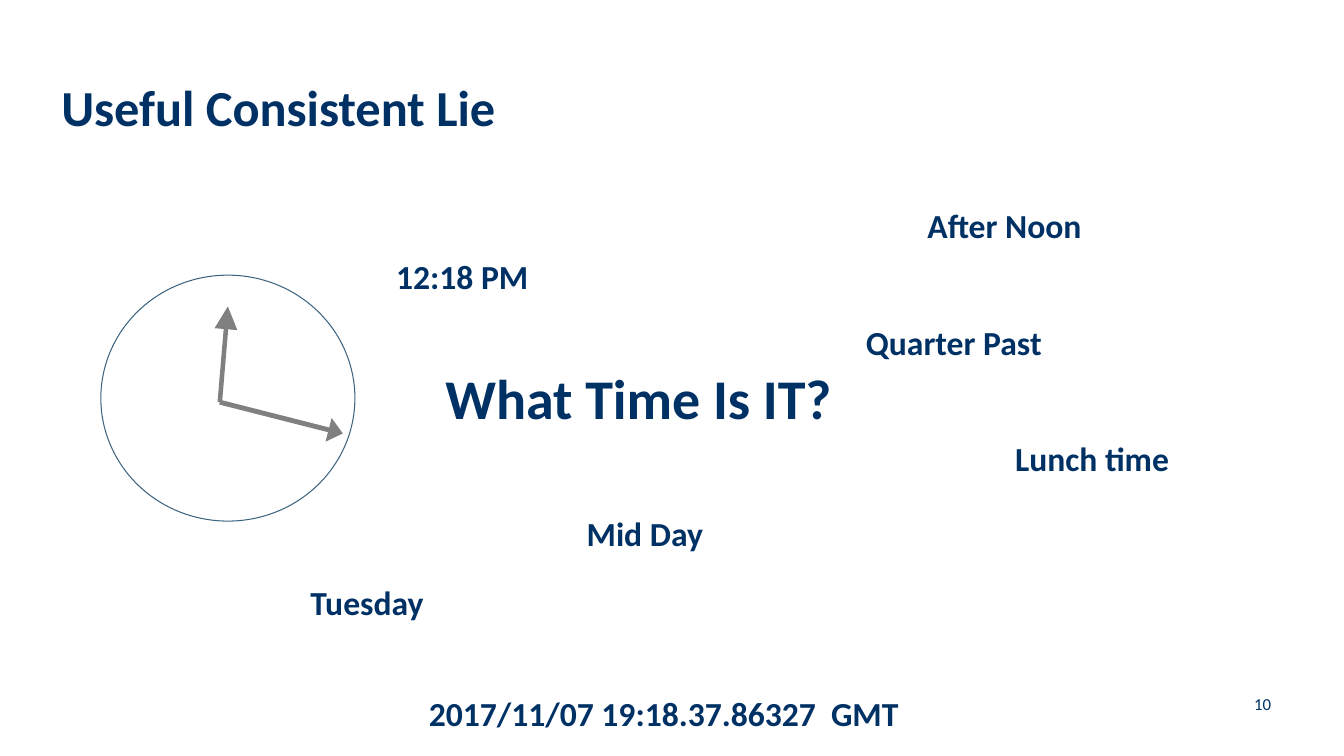
from lxml.etree import SubElement
from pptx import Presentation
from pptx.dml.color import RGBColor
from pptx.enum.shapes import MSO_CONNECTOR, MSO_SHAPE
from pptx.enum.text import MSO_ANCHOR, PP_ALIGN
from pptx.oxml.ns import qn
from pptx.util import Inches, Pt

NAVY = RGBColor(0x00, 0x31, 0x65)
RIM_BLUE = RGBColor(0x3C, 0x64, 0x81)
HAND_GREY = RGBColor(0x80, 0x80, 0x80)
WHITE = RGBColor(0xFF, 0xFF, 0xFF)

ANSWERS = [
    ("After Noon", 9.1, 1.98, 1.75, PP_ALIGN.LEFT),
    ("Lunch time", 9.97, 4.3, 1.74, PP_ALIGN.LEFT),
    ("Mid Day", 5.72, 5.04, 1.37, PP_ALIGN.LEFT),
    ("Quarter Past", 8.49, 3.14, 2.36, PP_ALIGN.LEFT),
    ("Tuesday", 2.98, 5.72, 1.34, PP_ALIGN.LEFT),
    ("12:18 PM", 3.83, 2.49, 1.52, PP_ALIGN.LEFT),
    ("2017/11/07 19:18.37.86327  GMT", 4.05, 6.83, 5.07, PP_ALIGN.CENTER),
]


def add_label(slide, words, box, size, bold=True, anchor=MSO_ANCHOR.TOP,
              align=PP_ALIGN.LEFT, wrap=True):
    label = slide.shapes.add_textbox(*map(Inches, box))
    frame = label.text_frame
    frame.word_wrap = wrap
    frame.vertical_anchor = anchor
    paragraph = frame.paragraphs[0]
    paragraph.alignment = align
    run = paragraph.add_run()
    run.text = words
    run.font.name = "Calibri"
    run.font.size = Pt(size)
    run.font.bold = bold
    run.font.color.rgb = NAVY


def add_hand(slide, pivot, tip, weight, head_length):
    hand = slide.shapes.add_connector(
        MSO_CONNECTOR.STRAIGHT, *map(Inches, (*pivot, *tip)))
    hand.line.color.rgb = HAND_GREY
    hand.line.width = Pt(weight)
    SubElement(hand.line._get_or_add_ln(), qn("a:tailEnd"),
               type="triangle", w="lg", len=head_length)
    SubElement(hand._element.spPr, qn("a:effectLst"))


def add_clock(slide, left, top, width, height):
    face = slide.shapes.add_shape(
        MSO_SHAPE.OVAL, *map(Inches, (left, top, width, height)))
    face.shadow.inherit = False
    face.fill.solid()
    face.fill.fore_color.rgb = WHITE
    face.line.color.rgb = RIM_BLUE
    face.line.width = Pt(0.75)
    pivot = (left + 1.18, top + 1.26)
    add_hand(slide, pivot, (left + 1.26, top + 0.31), 3.25, "lg")
    add_hand(slide, pivot, (left + 2.4, top + 1.57), 3.5, "med")


def add_answers(slide, answers):
    for words, left, top, width, align in answers:
        add_label(slide, words, (left, top, width, 0.5), 24,
                  align=align, wrap=False)


def main():
    deck = Presentation()
    deck.slide_width = Inches(13.33)
    deck.slide_height = Inches(7.5)
    slide = deck.slides.add_slide(deck.slide_layouts[6])
    add_label(slide, "10", (12.34, 6.86, 0.49, 0.25), 12,
              bold=False, anchor=MSO_ANCHOR.MIDDLE)
    add_label(slide, "Useful Consistent Lie", (0.51, 0.14, 12.14, 1.26), 36,
              anchor=MSO_ANCHOR.BOTTOM)
    add_clock(slide, 1, 2.73, 2.52, 2.44)
    add_label(slide, "What Time Is IT?", (4.32, 3.56, 4.16, 0.77), 40)
    add_answers(slide, ANSWERS)
    deck.save("out.pptx")


if __name__ == "__main__":
    main()
